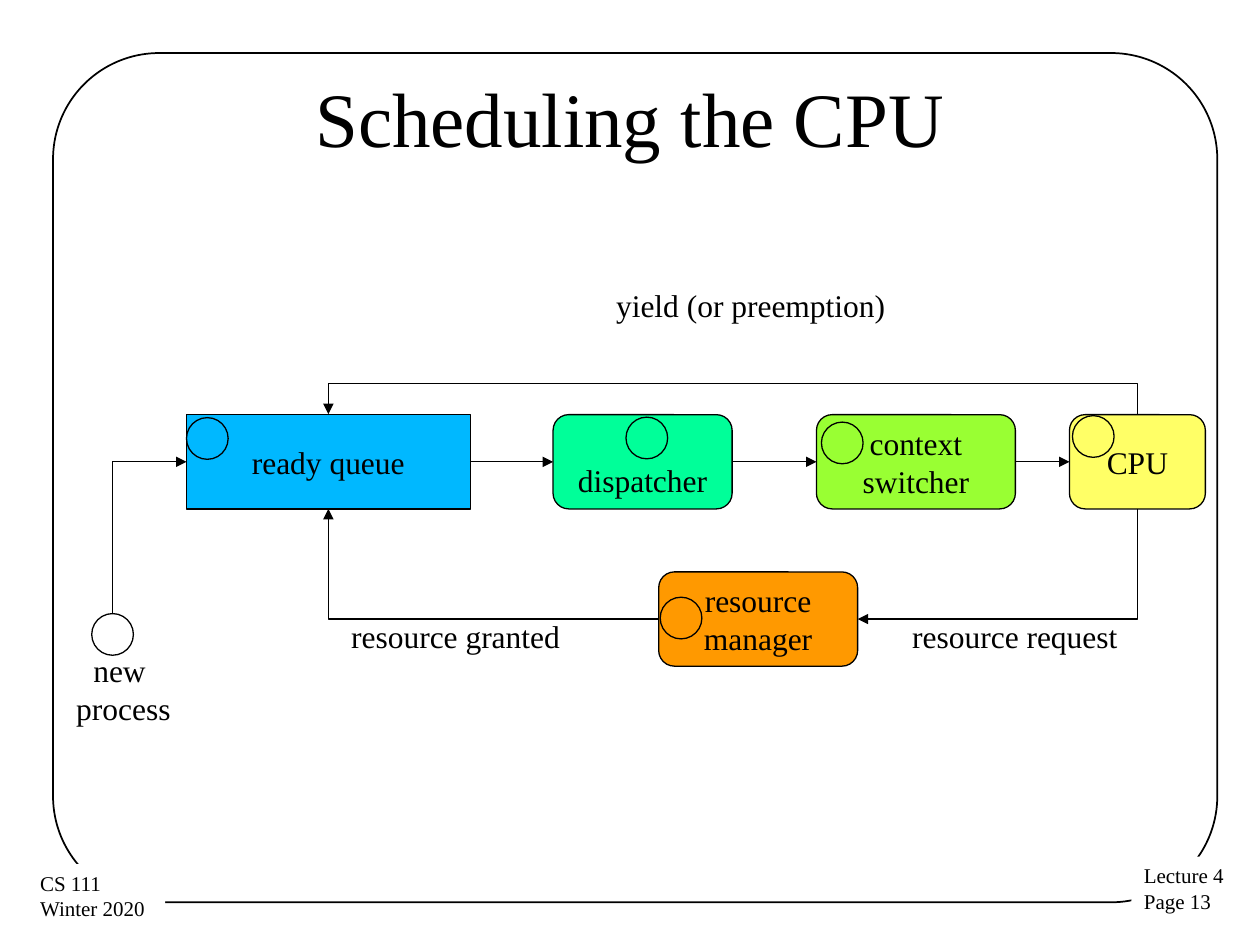
from itertools import pairwise

from lxml.etree import SubElement
from pptx import Presentation
from pptx.dml.color import RGBColor
from pptx.enum.shapes import MSO_CONNECTOR as Connector, MSO_SHAPE as Shape
from pptx.enum.text import MSO_ANCHOR as Anchor, PP_ALIGN as Align
from pptx.oxml.ns import qn
from pptx.util import Cm, Pt

FONT = "Times New Roman"
BLACK, WHITE = "000000", "FFFFFF"
LEFT, CENTER = Align.LEFT, Align.CENTER
ROW_TOP, MANAGER_TOP, BOX_HEIGHT = 8.36, 11.53, 1.9
TOKEN_SIZE = 0.84
YIELD_RISE = 0.63

# name: (lines, left, top, width, fill, shape, top inset)
ROUNDED = Shape.FLOWCHART_ALTERNATE_PROCESS
STAGES = {
    "queue": (["ready queue"], 3.76, ROW_TOP, 5.72, "00B8FF", Shape.RECTANGLE, 0.13),
    "dispatcher": (["dispatcher"], 11.15, ROW_TOP, 3.61, "00FF99", ROUNDED, 0.86),
    "switcher": (["context", "switcher"], 16.46, ROW_TOP, 4.01, "99FF33", ROUNDED, 0.13),
    "cpu": (["CPU"], 21.56, ROW_TOP, 2.74, "FFFF66", ROUNDED, 0.13),
    "manager": (["resource", "manager"], 13.28, MANAGER_TOP, 4.01, "FF9900", ROUNDED, 0.13),
}
PIPELINE = ["queue", "dispatcher", "switcher", "cpu"]

# lines, left, top, width, height, alignment
LABELS = [
    (["yield (or preemption)"], 12.17, 5.64, 6.05, 1.02, LEFT),
    (["resource request"], 18.14, 12.32, 4.7, 1.02, LEFT),
    (["resource granted"], 6.83, 12.32, 4.78, 1.02, LEFT),
    (["new ", "process"], 1.27, 13, 2.44, 1.8, CENTER),
]
CORNERS = [
    (["Lecture 4", "Page 13"], 22.81, 17.27, 2.16, 1.3, LEFT),
    (["CS 111", "Winter 2020"], 0.56, 17.42, 2.77, 1.3, LEFT),
]
NEW_PROCESS = (1.85, 12.37)
TOKENS = [NEW_PROCESS, (12.62, 8.41), (16.56, 8.51), (21.62, 8.38),
          (3.76, 8.42), (13.31, 12.04)]


def color(hex_string):
    return RGBColor.from_string(hex_string)


def write(shape, lines, size, align, anchor=Anchor.TOP, wrap=False):
    frame = shape.text_frame
    frame.word_wrap = wrap
    frame.vertical_anchor = anchor
    frame.text = "\n".join(lines)
    for paragraph in frame.paragraphs:
        paragraph.alignment = align
        paragraph.font.name = FONT
        paragraph.font.size = Pt(size)
        paragraph.font.color.rgb = color(BLACK)


def add_text(slide, lines, left, top, width, height, align, size=18, **options):
    box = slide.shapes.add_textbox(Cm(left), Cm(top), Cm(width), Cm(height))
    write(box, lines, size, align, **options)
    return box


def add_outlined(slide, kind, left, top, width, height, fill=None, weight=0.75):
    shape = slide.shapes.add_shape(kind, Cm(left), Cm(top), Cm(width), Cm(height))
    shape.shadow.inherit = False
    if fill:
        shape.fill.solid()
        shape.fill.fore_color.rgb = color(fill)
    else:
        shape.fill.background()
    shape.line.color.rgb = color(BLACK)
    shape.line.width = Pt(weight)
    return shape


def add_arrow(slide, kind, start, end):
    arrow = slide.shapes.add_connector(kind, *(Cm(value) for value in (*start, *end)))
    arrow.line.color.rgb = color(BLACK)
    arrow.line.width = Pt(0.75)
    SubElement(arrow.line._get_or_add_ln(), qn("a:tailEnd"), type="triangle")
    SubElement(arrow._element.spPr, qn("a:effectLst"))
    return arrow


def add_bent_arrow(slide, start, end, turn, preset="bentConnector2", flip=False, adjust=None):
    """Draw an elbow whose first leg points right, turned clockwise by turn degrees."""
    arrow = add_arrow(slide, Connector.ELBOW, start, end)
    width, height = abs(end[0] - start[0]), abs(end[1] - start[1])
    if turn in (90, 270):
        width, height = height, width
    arrow.left = Cm((start[0] + end[0] - width) / 2)
    arrow.top = Cm((start[1] + end[1] - height) / 2)
    arrow.width, arrow.height = Cm(width), Cm(height)

    transform = arrow._element.spPr.find(qn("a:xfrm"))
    for name in ("flipH", "flipV"):
        transform.attrib.pop(name, None)
    transform.set("rot", str(turn * 60000))
    if flip:
        transform.set("flipV", "1")
    geometry = arrow._element.spPr.find(qn("a:prstGeom"))
    geometry.set("prst", preset)
    if adjust:
        guides = geometry.find(qn("a:avLst"))
        SubElement(guides, qn("a:gd"), name="adj1", fmla=f"val {round(adjust * 100000)}")


def side(name, site):
    """Middle of a stage's side: 0 top, 1 left, 2 bottom, 3 right."""
    _, left, top, width, *_ = STAGES[name]
    middle_x, middle_y = left + width / 2, top + BOX_HEIGHT / 2
    return [(middle_x, top), (left, middle_y),
            (middle_x, top + BOX_HEIGHT), (left + width, middle_y)][site]


def main():
    presentation = Presentation()
    presentation.slide_width, presentation.slide_height = Cm(25.4), Cm(19.05)
    slide = presentation.slides.add_slide(presentation.slide_layouts[6])

    frame = add_outlined(slide, Shape.ROUNDED_RECTANGLE, 1.07, 1.07, 23.47, 17.12, weight=1)
    frame.adjustments[0] = 0.125
    for corner in CORNERS:
        box = add_text(slide, *corner, size=12)
        box.fill.solid()
        box.fill.fore_color.rgb = color(WHITE)
    add_text(slide, ["Scheduling the CPU"], 1.27, 0.76, 22.86, 3.18, CENTER,
             size=44, anchor=Anchor.MIDDLE, wrap=True)

    stages = {}
    for name, (lines, left, top, width, fill, kind, inset) in STAGES.items():
        stage = add_outlined(slide, kind, left, top, width, BOX_HEIGHT, fill)
        write(stage, lines, 18, CENTER, Anchor.MIDDLE)
        stage.text_frame.margin_top = Cm(inset)
        stages[name] = stage

    for source, target in pairwise(PIPELINE):
        arrow = add_arrow(slide, Connector.STRAIGHT, side(source, 3), side(target, 1))
        arrow.begin_connect(stages[source], 3)
        arrow.end_connect(stages[target], 1)

    # The yield loop starts and ends at one height, so its box is given a sliver of depth.
    sliver = 0.01
    queue_x, queue_y = side("queue", 0)
    add_bent_arrow(slide, side("cpu", 0), (queue_x, queue_y - sliver), 270,
                   "bentConnector3", flip=True, adjust=YIELD_RISE / sliver)
    add_bent_arrow(slide, side("cpu", 2), side("manager", 3), 90)
    add_bent_arrow(slide, side("manager", 1), side("queue", 2), 180)
    process_x, process_y = NEW_PROCESS
    add_bent_arrow(slide, (process_x + TOKEN_SIZE / 2, process_y), side("queue", 1), 270)

    for label in LABELS:
        add_text(slide, *label)
    for left, top in TOKENS:
        add_outlined(slide, Shape.OVAL, left, top, TOKEN_SIZE, TOKEN_SIZE)

    presentation.save("out.pptx")


if __name__ == "__main__":
    main()
